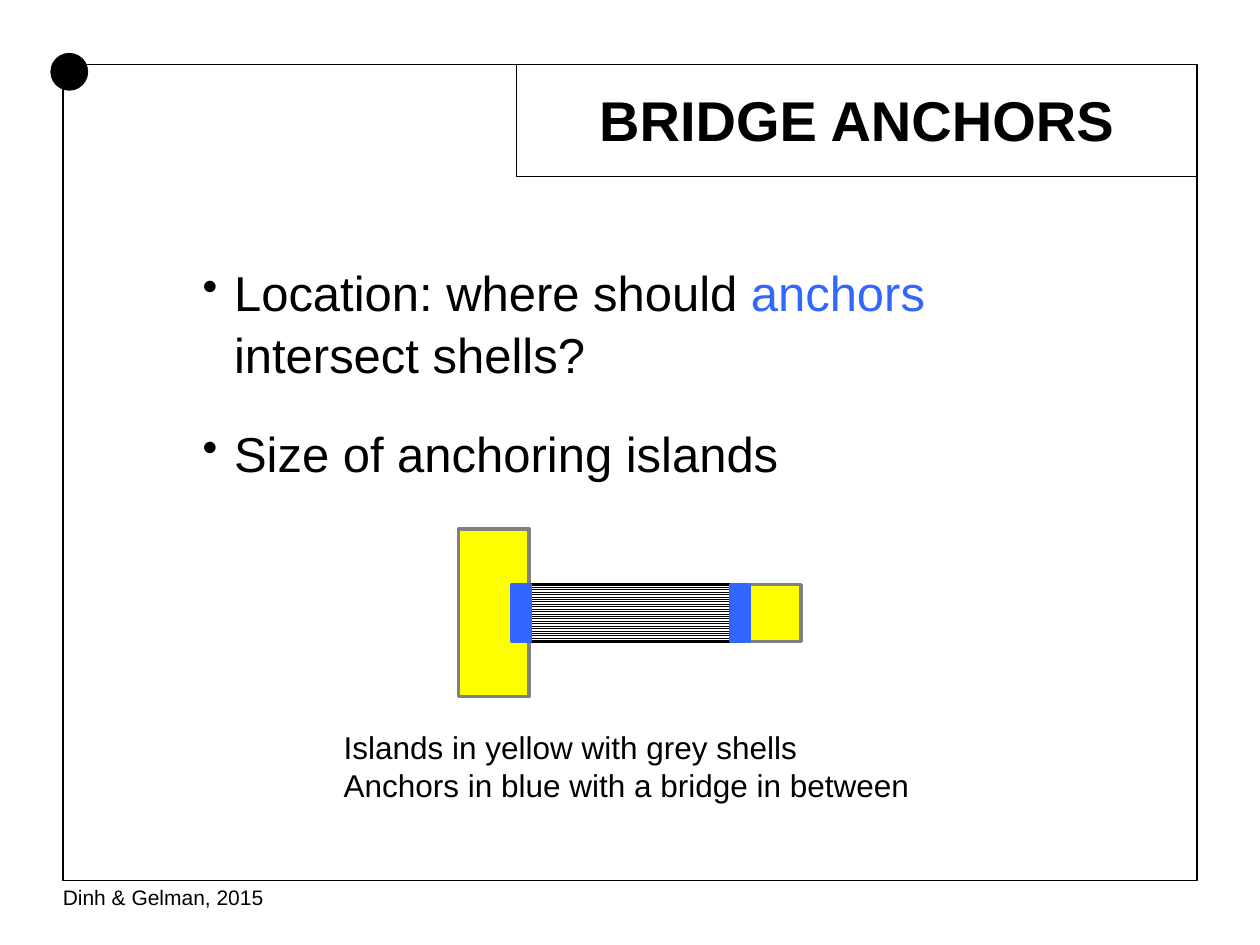
from lxml import etree
from pptx import Presentation
from pptx.dml.color import RGBColor
from pptx.enum import dml, shapes, text
from pptx.oxml.ns import qn
from pptx.util import Inches, Pt

BLACK = RGBColor(0, 0, 0)
WHITE = RGBColor(255, 255, 255)
YELLOW = RGBColor(255, 255, 0)
GREY = RGBColor(128, 128, 128)
BLUE = RGBColor(0x33, 0x66, 0xFF)

FOOTER = [[("Dinh & Gelman, 2015", BLACK)]]
TITLE = [[("BRIDGE ANCHORS", BLACK)]]
POINTS = [
    [("Location: where should ", BLACK), ("anchors", BLUE), (" intersect shells?", BLACK)],
    [("Size of anchoring islands", BLACK)],
]
CAPTION = [
    [("Islands in yellow with grey shells", BLACK)],
    [("Anchors in blue with a bridge in between", BLACK)],
]

FRAME = (0.5, 0.51, 9, 6.48)
TITLE_WIDTH, TITLE_HEIGHT = 5.4, 0.89
TITLE_LEFT = FRAME[0] + FRAME[2] - TITLE_WIDTH

BRIDGE_LEFT, BRIDGE_TOP, BRIDGE_WIDTH, BRIDGE_HEIGHT = 4.2, 4.64, 1.6, 0.45
BRIDGE_RIGHT = BRIDGE_LEFT + BRIDGE_WIDTH
ISLAND_WIDTH, ISLAND_HEIGHT, ANCHOR_WIDTH = 0.56, 1.33, 0.15
ISLAND_TOP = BRIDGE_TOP + BRIDGE_HEIGHT / 2 - ISLAND_HEIGHT / 2

BRIDGE = (BRIDGE_LEFT, BRIDGE_TOP, BRIDGE_WIDTH, BRIDGE_HEIGHT)
ISLANDS = [
    (BRIDGE_LEFT - ISLAND_WIDTH, ISLAND_TOP, ISLAND_WIDTH, ISLAND_HEIGHT),
    (BRIDGE_RIGHT, BRIDGE_TOP, ISLAND_WIDTH, BRIDGE_HEIGHT),
]
ANCHORS = [
    (left, BRIDGE_TOP, ANCHOR_WIDTH, BRIDGE_HEIGHT)
    for left in (BRIDGE_LEFT - ANCHOR_WIDTH + 0.01, BRIDGE_RIGHT)
]


def add_figure(page, place, fill=None, line=None, width=0.75, kind="RECTANGLE"):
    preset = getattr(shapes.MSO_SHAPE, kind)
    figure = page.shapes.add_shape(preset, *map(Inches, place))
    figure.shadow.inherit = False
    for part, color in ((figure.fill, fill), (figure.line.fill, line)):
        if color is None:
            part.background()
        else:
            part.solid()
            part.fore_color.rgb = color
    if line is not None:
        figure.line.width = Pt(width)
    return figure


def add_bullet(para):
    props = para._p.get_or_add_pPr()
    props.set("marL", str(Inches(0.25)))
    props.set("indent", str(Inches(-0.25)))
    etree.SubElement(props, qn("a:buSzPct")).set("val", "90000")
    etree.SubElement(props, qn("a:buChar")).set("char", "•")


def add_text(page, place, lines, size, bold=False, wrap=True, bullets=False,
             anchor=text.MSO_ANCHOR.TOP, **format_values):
    box = page.shapes.add_textbox(*map(Inches, place))
    frame = box.text_frame
    frame.word_wrap = wrap
    frame.vertical_anchor = anchor
    for index, spans in enumerate(lines):
        para = frame.add_paragraph() if index else frame.paragraphs[0]
        if bullets:
            add_bullet(para)
        for name, value in format_values.items():
            if index or name != "space_before":
                setattr(para, name, value)
        for words, color in spans:
            span = para.add_run()
            span.text = words
            span.font.color.rgb = color
            for name, value in {"name": "Arial", "size": Pt(size), "bold": bold}.items():
                setattr(span.font, name, value)


def main():
    deck = Presentation()
    deck.slide_width, deck.slide_height = Inches(10), Inches(7.5)
    page = deck.slides.add_slide(deck.slide_layouts[6])

    add_figure(page, FRAME, line=BLACK)
    add_figure(page, (TITLE_LEFT, FRAME[1], TITLE_WIDTH, TITLE_HEIGHT), line=BLACK)
    add_figure(page, (0.4, 0.42, 0.3, 0.3), fill=BLACK, kind="OVAL")
    add_text(page, (0.4, 6.97, 1.81, 0.3), FOOTER, 12, wrap=False)
    add_text(page, (TITLE_LEFT, 0.55, TITLE_WIDTH, TITLE_HEIGHT), TITLE, 32, bold=True,
             anchor=text.MSO_ANCHOR.MIDDLE, alignment=text.PP_ALIGN.CENTER,
             line_spacing=0.8)
    add_text(page, (1.51, 2.01, 7.3, 4.17), POINTS, 28, bullets=True,
             line_spacing=1.05, space_before=Pt(21.5))

    bridge = add_figure(page, BRIDGE, line=BLACK, width=2)
    bridge.fill.patterned()
    bridge.fill.pattern = dml.MSO_PATTERN.LIGHT_HORIZONTAL
    bridge.fill.fore_color.rgb = BLACK
    bridge.fill.back_color.rgb = WHITE
    for places, fill, line in ((ISLANDS, YELLOW, GREY), (ANCHORS, BLUE, BLUE)):
        for place in places:
            add_figure(page, place, fill, line, 2)
    add_text(page, (2.63, 5.73, 4.74, 0.71), CAPTION, 18, wrap=False)

    deck.save("out.pptx")


if __name__ == "__main__":
    main()
